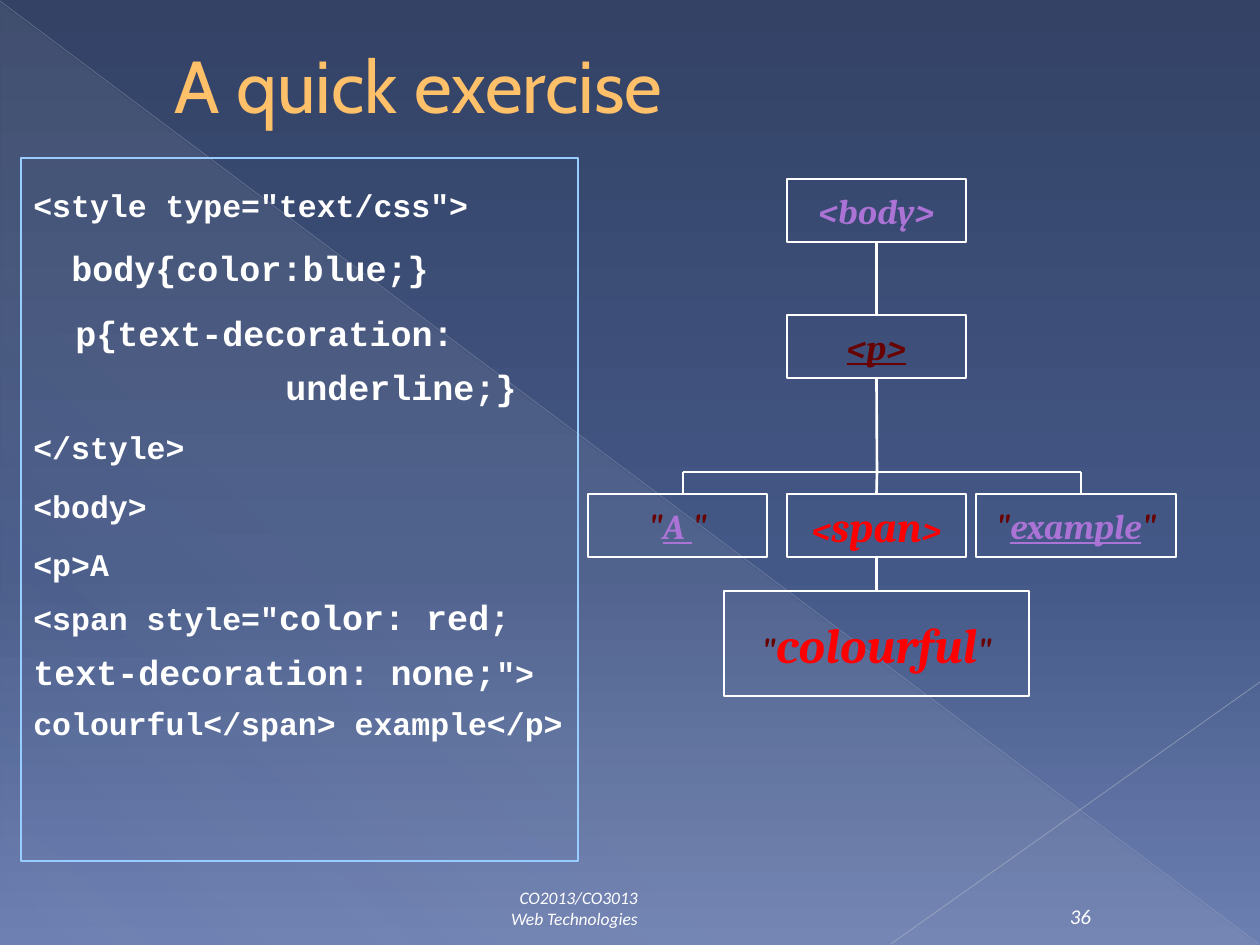
from dataclasses import dataclass

import lxml.etree
import pptx
import pptx.dml.color
import pptx.enum.shapes
import pptx.enum.text
import pptx.oxml.ns
import pptx.util

EMU_PER_PX = 914400 / 126
SHAPE = pptx.enum.shapes.MSO_SHAPE
ALIGN = pptx.enum.text.PP_ALIGN
ANCHOR = pptx.enum.text.MSO_ANCHOR
qn = pptx.oxml.ns.qn
COLOURS = {
    "white": "FFFFFF", "title": "FFC06A", "frame": "99CCFF", "maroon": "680000",
    "violet": "AB73D5", "red": "FF0000", "glow": "D4D4D6",
    "falling": "B9BDC8", "rising": "C1C4CE",
    "sky_top": "334265", "sky_middle": "445887", "sky_bottom": "6C7FB1",
}


@dataclass
class Span:
    text: str
    size: int = 20
    colour: str = "white"
    underline: bool = False


@dataclass
class Node:
    name: str
    area: tuple[int, int, int, int]
    spans: list[Span]


@dataclass
class CodeLine:
    spans: list[Span]
    margin: int = 0
    indent: int = 0
    before: float = 5.3


def quoted(word: Span) -> list[Span]:
    return [Span('"', colour="maroon"), word, Span('"', colour="maroon")]


NODES = [
    Node("body", (787, 179, 179, 63), [Span("<body>", colour="violet")]),
    Node("p", (787, 315, 179, 63), [Span("<p>", colour="maroon", underline=True)]),
    Node("a", (588, 494, 179, 63), quoted(Span("A ", colour="violet", underline=True))),
    Node("span", (787, 494, 179, 63),
         [Span("<", colour="red"), Span("span", 24, "red"), Span(">", colour="red")]),
    Node("example", (976, 494, 200, 63),
         quoted(Span("example", colour="violet", underline=True))),
    Node("colourful", (724, 591, 305, 105), quoted(Span("colourful", 28, "red"))),
]
CODE = [
    CodeLine([Span('<style type="text/css">', 18)]),
    CodeLine([Span("body{color:blue;}")], margin=38, before=5.9),
    CodeLine([Span("p{text-decoration:\vunderline;}")], margin=252, indent=-210, before=5.9),
    CodeLine([Span("</style>", 18)]),
    CodeLine([Span("<body>", 18)]),
    CodeLine([Span('<p>A\v<span style="', 18), Span("color: red; text-decoration: none;"),
              Span('"> colourful</span> example</p>', 18)]),
]
BUS_Y, BUS_LEFT, BUS_MIDDLE, BUS_RIGHT = 472, 683, 877, 1081


def px(length: int) -> pptx.util.Emu:
    return pptx.util.Emu(round(length * EMU_PER_PX))


def rgb(name: str) -> pptx.dml.color.RGBColor:
    return pptx.dml.color.RGBColor.from_string(COLOURS[name])


def add_alpha(colour, percent: int) -> None:
    lxml.etree.SubElement(colour, qn("a:alpha")).set("val", str(percent * 1000))


def set_gradient(properties, stops: list[tuple[int, str, int]], angle: int) -> None:
    """Replace the solid fill with stops of (position, colour, opacity)."""
    gradient = lxml.etree.Element(qn("a:gradFill"), rotWithShape="1")
    stop_list = lxml.etree.SubElement(gradient, qn("a:gsLst"))
    for position, name, opacity in stops:
        stop = lxml.etree.SubElement(stop_list, qn("a:gs"), pos=str(position * 1000))
        colour = lxml.etree.SubElement(stop, qn("a:srgbClr"), val=COLOURS[name])
        if opacity < 100:
            add_alpha(colour, opacity)
    lxml.etree.SubElement(gradient, qn("a:lin"), ang=str(angle * 60000), scaled="0")
    properties.replace(properties.find(qn("a:solidFill")), gradient)


def add_outline(page, kind, area: tuple[int, int, int, int], colour: str):
    box = page.shapes.add_shape(kind, *map(px, area))
    box.shadow.inherit = False
    box.fill.background()
    box.line.color.rgb = rgb(colour)
    box.line.width = pptx.util.Pt(0.75)
    return box


def add_line(page, start: tuple[int, int], end: tuple[int, int],
             colour: str = "white", width: float = 1.5):
    line = page.shapes.add_connector(
        pptx.enum.shapes.MSO_CONNECTOR.STRAIGHT, *map(px, start + end))
    line.line.color.rgb = rgb(colour)
    line.line.width = pptx.util.Pt(width)
    lxml.etree.SubElement(line.element.spPr, qn("a:effectLst"))
    return line


def write_spans(para, spans: list[Span], font: str, bold=False, italic=False) -> None:
    para.font.name, para.font.bold, para.font.italic = font, bold, italic
    for span in spans:
        for index, piece in enumerate(span.text.split("\v")):
            if index:
                para.add_line_break()
            run = para.add_run()
            run.text = piece
            run.font.size = pptx.util.Pt(span.size)
            run.font.color.rgb = rgb(span.colour)
            if span.underline:
                run.font.underline = True


def add_text_frame(page, area: tuple[int, int, int, int], anchor):
    frame = page.shapes.add_textbox(*map(px, area)).text_frame
    frame.word_wrap = True
    frame.vertical_anchor = anchor
    return frame


def add_backdrop(page) -> None:
    page.background.fill.solid()
    set_gradient(page.element.find(".//" + qn("p:bgPr")),
                 [(0, "sky_top", 100), (60, "sky_middle", 100), (100, "sky_bottom", 100)], 90)
    triangle = page.shapes.add_shape(SHAPE.RIGHT_TRIANGLE, *map(px, (1, 3, 1257, 942)))
    triangle.shadow.inherit = False
    triangle.line.fill.background()
    triangle.fill.solid()
    set_gradient(triangle.element.spPr, [(0, "glow", 10), (70, "glow", 8), (100, "glow", 1)], 133)
    for start, end, colour, width, opacity in (
            ((0, 1), (1259, 944), "falling", 0.39, 35),
            ((1260, 682), (891, 944), "rising", 0.47, 45)):
        line = add_line(page, start, end, colour, width)
        add_alpha(line.element.spPr.find(".//" + qn("a:srgbClr")), opacity)


def place_title(page) -> None:
    title = page.shapes.title
    title.left, title.top, title.width, title.height = map(px, (95, 32, 1071, 105))
    title.text_frame.vertical_anchor = ANCHOR.MIDDLE
    para = title.text_frame.paragraphs[0]
    para.alignment = ALIGN.LEFT
    write_spans(para, [Span("A quick exercise", 42, "title")], "Cabin")
    para._p.get_or_add_pPr().set("marL", str(px(67)))
    title.element.getparent().append(title.element)  # in front of the backdrop


def add_code(page) -> None:
    frame = add_text_frame(page, (21, 168, 557, 672), ANCHOR.TOP)
    for index, line in enumerate(CODE):
        para = frame.add_paragraph() if index else frame.paragraphs[0]
        para.line_spacing = 1.3
        para.space_before = pptx.util.Pt(line.before)
        properties = para._p.get_or_add_pPr()
        properties.set("marL", str(px(line.margin)))
        properties.set("indent", str(px(line.indent)))
        write_spans(para, line.spans, "Courier New", bold=True)
    add_outline(page, SHAPE.RECTANGLE, (21, 158, 557, 703), "frame")


def add_tree(page) -> None:
    boxes = {}
    for node in NODES:
        box = add_outline(page, SHAPE.FLOWCHART_PROCESS, node.area, "white")
        box.text_frame.word_wrap = False
        box.text_frame.vertical_anchor = ANCHOR.MIDDLE
        para = box.text_frame.paragraphs[0]
        para.alignment = ALIGN.CENTER
        write_spans(para, node.spans, "Cambria", bold=True, italic=True)
        boxes[node.name] = box
    for parent, child, top, bottom in (("body", "p", 242, 315), ("span", "colourful", 557, 591)):
        line = add_line(page, (BUS_MIDDLE, top), (BUS_MIDDLE, bottom))
        line.begin_connect(boxes[parent], 2)
        line.end_connect(boxes[child], 0)
    add_line(page, (BUS_MIDDLE, 378), (BUS_MIDDLE, BUS_Y)).begin_connect(boxes["p"], 2)
    add_line(page, (BUS_LEFT, BUS_Y), (BUS_RIGHT, BUS_Y))
    for x in (BUS_LEFT, BUS_MIDDLE, BUS_RIGHT):
        drop = add_line(page, (x, BUS_Y), (x, 494))
        if x == BUS_MIDDLE:
            drop.end_connect(boxes["span"], 0)


def add_footer(page) -> None:
    for area, text, size, alignment in (
            ((63, 893, 587, 42), "CO2013/CO3013\vWeb Technologies", 10, ALIGN.RIGHT),
            ((1046, 893, 69, 42), "36", 12, ALIGN.CENTER)):
        para = add_text_frame(page, area, ANCHOR.BOTTOM).paragraphs[0]
        para.alignment = alignment
        write_spans(para, [Span(text, size)], "Calibri", italic=True)


def main() -> None:
    deck = pptx.Presentation()
    deck.slide_width, deck.slide_height = px(1260), px(945)
    page = deck.slides.add_slide(deck.slide_layouts[5])
    add_backdrop(page)
    place_title(page)
    add_code(page)
    add_tree(page)
    add_footer(page)
    deck.save("out.pptx")


if __name__ == "__main__":
    main()
